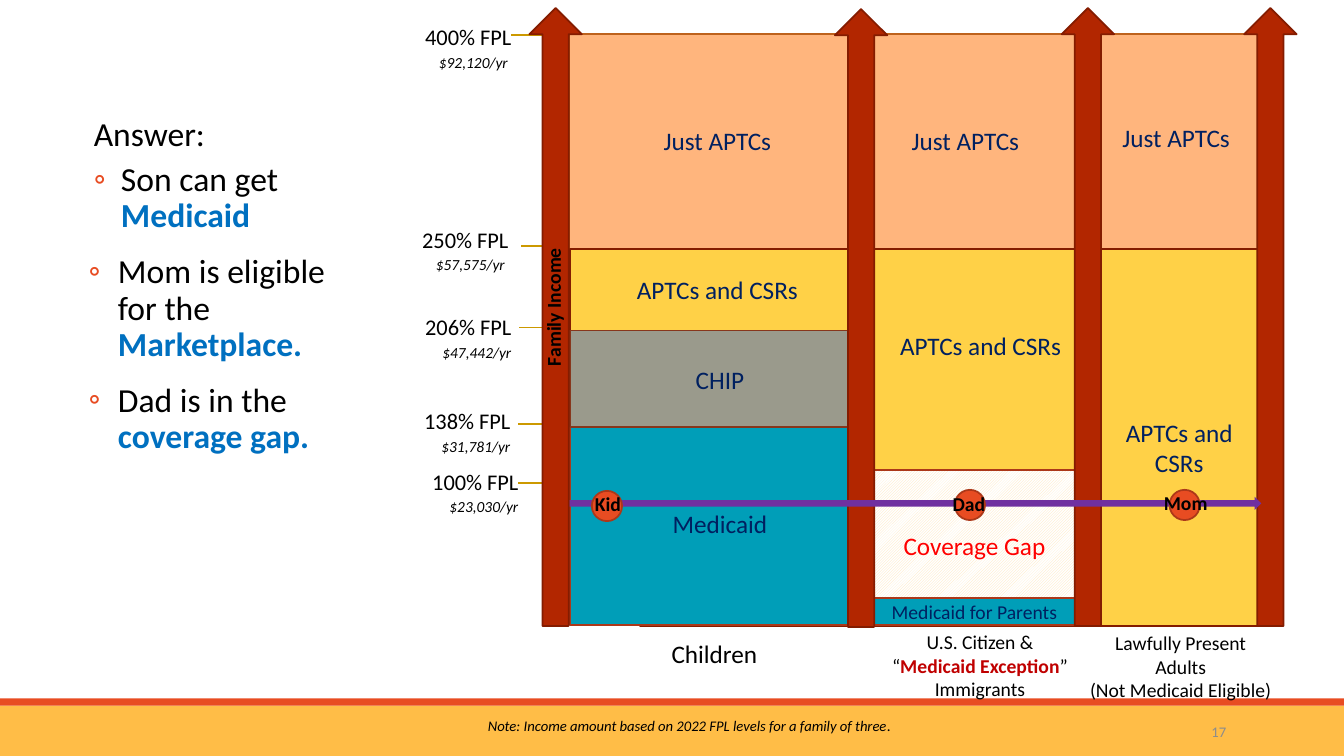
from dataclasses import dataclass

from lxml import etree
from pptx import Presentation
from pptx.dml.color import RGBColor
from pptx.enum.dml import MSO_PATTERN
from pptx.enum.shapes import MSO_CONNECTOR, MSO_SHAPE
from pptx.enum.text import MSO_ANCHOR, MSO_AUTO_SIZE, PP_ALIGN
from pptx.oxml.ns import qn
from pptx.util import Emu, Pt

PX = 9144
FONT = "Calibri"
BLACK, NAVY, BLUE = "000000", "002060", "0070C0"
YELLOW, TEAL, ORANGE = "FFD147", "009EB8", "E84C22"
RUST, MAROON = "AC3819", "841C00"
RECT, CORNER, OVAL = MSO_SHAPE.RECTANGLE, MSO_SHAPE.CORNER, MSO_SHAPE.OVAL
UP_ARROW, RIGHT_ARROW = MSO_SHAPE.UP_ARROW, MSO_SHAPE.RIGHT_ARROW
STRAIGHT = MSO_CONNECTOR.STRAIGHT
LEFT, CENTER, RIGHT = PP_ALIGN.LEFT, PP_ALIGN.CENTER, PP_ALIGN.RIGHT
TOP, MIDDLE = MSO_ANCHOR.TOP, MSO_ANCHOR.MIDDLE
NO_AUTOFIT = MSO_AUTO_SIZE.NONE
DIAGONAL = MSO_PATTERN.LIGHT_UPWARD_DIAGONAL


@dataclass(frozen=True)
class Words:
    text: str
    size: float
    color: str = BLACK
    bold: bool = False
    italic: bool = False


@dataclass(frozen=True)
class Box:
    left: int
    top: int
    width: int
    height: int

    def emu(self):
        return [Emu(v * PX) for v in (self.left, self.top, self.width, self.height)]


@dataclass(frozen=True)
class Band:
    box: Box
    fill: str
    line: str
    label: Words | None = None


@dataclass(frozen=True)
class Label:
    box: Box
    lines: tuple
    align: int = CENTER
    rotation: int = 0
    anchor: int = TOP
    leading: int | None = None


@dataclass(frozen=True)
class FplLevel:
    percent: str
    amount: str
    right: int
    top: int
    tick_left: int
    tick_y: int


@dataclass(frozen=True)
class Person:
    name: str
    circle_left: int
    circle_top: int
    name_left: int
    name_top: int


@dataclass(frozen=True)
class Answer:
    lead: str
    program: str
    margin: int
    hanging: int


FPL_LEVELS = [
    FplLevel("400% FPL", "$92,120/yr ", 517, 24, 507, 35),
    FplLevel("250% FPL", "$57,575/yr ", 514, 225, 517, 244),
    FplLevel("206% FPL", "$47,442/yr", 517, 312, 515, 325),
    FplLevel("138% FPL", "$31,781/yr", 516, 405, 514, 421),
    FplLevel("100% FPL", "$23,030/yr", 524, 465, 514, 479),
]
MEDICAID = Band(Box(565, 418, 298, 202), TEAL, RUST, Words("Medicaid", 18, NAVY))
COVERAGE_GAP = Band(Box(863, 466, 207, 151), "FFE5B5", RUST, Words("Coverage Gap", 18, "FF0000"))
CHIP = Band(Box(565, 328, 298, 96), "9A9A8C", "87361C", Words("CHIP", 18, NAVY))
PARENTS = Band(Box(863, 593, 207, 27), TEAL, RUST, Words("Medicaid for Parents", 14, NAVY))
JUST_APTCS = Band(Box(565, 34, 687, 214), "FFB57D", "BD621D")
APTCS_AND_CSRS = Band(Box(565, 247, 687, 374), YELLOW, MAROON)
INCOME_ARROWS = [(525, 8), (828, 9), (1053, 8), (1234, 8)]

just_aptcs = ((Words("Just APTCs", 18, NAVY),),)
aptcs_and_csrs = ((Words("APTCs and CSRs", 18, NAVY),),)
LABELS = [
    Label(Box(587, 119, 249, 40), just_aptcs),
    Label(Box(833, 119, 249, 40), just_aptcs),
    Label(Box(1042, 116, 249, 40), just_aptcs),
    Label(Box(587, 267, 249, 40), aptcs_and_csrs),
    Label(Box(848, 323, 249, 40), aptcs_and_csrs),
    Label(Box(1085, 409, 169, 71), aptcs_and_csrs),
    Label(Box(475, 278, 152, 38), ((Words("Family Income", 14, bold=True),),), LEFT, 270),
    Label(Box(554, 628, 309, 40), ((Words("Children", 18),),)),
    Label(Box(874, 620, 196, 81), ((Words("U.S. Citizen & “", 14),
                                    Words("Medicaid Exception", 14, "C00000", True),
                                    Words("” Immigrants", 14)),)),
    Label(Box(1070, 621, 202, 81), ((Words("Lawfully Present Adults", 14),),
                                    (Words("(Not Medicaid Eligible)", 14),))),
    Label(Box(474, 706, 535, 29), ((
        Words("Note: Income amount based on 2022 FPL levels for a family of three", 10.5, italic=True),
        Words(".", 11, italic=True)),), LEFT),
    Label(Box(1083, 706, 143, 40), ((Words("17", 10.5, "8C8C8C"),),), RIGHT, anchor=MIDDLE),
]
PEOPLE = [Person("Kid", 587, 487, 570, 483), Person("Dad", 947, 486, 928, 483),
          Person("Mom", 1160, 486, 1143, 482)]
ANSWERS = [Answer("Son can get ", "Medicaid", 32, 27),
           Answer("Mom is eligible for the ", "Marketplace.", 29, 29),
           Answer("Dad is in the ", "coverage gap.", 29, 29)]


def rgb(color: str) -> RGBColor:
    return RGBColor.from_string(color)


def add_words(paragraph, words: Words) -> None:
    run = paragraph.add_run()
    run.text = words.text
    font = run.font
    font.name, font.size, font.color.rgb = FONT, Pt(words.size), rgb(words.color)
    font.bold, font.italic = words.bold, words.italic


def draw_shape(slide, kind: int, band: Band):
    shape = slide.shapes.add_shape(kind, *band.box.emu())
    shape.shadow.inherit = False
    shape.fill.solid()
    shape.fill.fore_color.rgb = rgb(band.fill)
    if band.line:
        shape.line.color.rgb, shape.line.width = rgb(band.line), Pt(1.25)
    else:
        shape.line.fill.background()
    if band.label:
        shape.text_frame.vertical_anchor = MIDDLE
        paragraph = shape.text_frame.paragraphs[0]
        paragraph.alignment = CENTER
        add_words(paragraph, band.label)
    return shape


def draw_label(slide, label: Label) -> None:
    textbox = slide.shapes.add_textbox(*label.box.emu())
    textbox.rotation = label.rotation
    frame = textbox.text_frame
    frame.word_wrap, frame.vertical_anchor = True, label.anchor
    for index, line in enumerate(label.lines):
        paragraph = frame.add_paragraph() if index else frame.paragraphs[0]
        paragraph.alignment = label.align
        if label.leading:
            paragraph.line_spacing = Pt(label.leading)
        for words in line:
            add_words(paragraph, words)


def draw_level(slide, level: FplLevel) -> None:
    y = Emu(level.tick_y * PX)
    tick = slide.shapes.add_connector(
        STRAIGHT, Emu(level.tick_left * PX), y, Emu((level.tick_left + 60) * PX), y)
    tick.line.color.rgb, tick.line.width = rgb("CC9900"), Pt(1.25)
    etree.SubElement(tick._element.spPr, qn("a:effectLst"))
    lines = ((Words(level.percent, 16),), (Words(level.amount, 11, italic=True),))
    draw_label(slide, Label(Box(level.right - 152, level.top, 152, 52), lines, RIGHT, leading=15))


def draw_person(slide, person: Person) -> None:
    draw_shape(slide, OVAL, Band(Box(person.circle_left, person.circle_top, 30, 30), ORANGE, RUST))
    draw_label(slide, Label(Box(person.name_left, person.name_top, 66, 34),
                            ((Words(person.name, 14, bold=True),),)))


def format_answer(paragraph, margin: int, hanging: int, bulleted: bool) -> None:
    properties = paragraph._p.get_or_add_pPr()
    properties.set("marL", str(margin * PX))
    properties.set("indent", str(-hanging * PX))
    if bulleted:
        color = etree.SubElement(properties, qn("a:buClr"))
        etree.SubElement(color, qn("a:srgbClr"), val=ORANGE)
        etree.SubElement(properties, qn("a:buFont"), typeface=FONT)
        etree.SubElement(properties, qn("a:buChar"), char="◦")
    else:
        etree.SubElement(properties, qn("a:buNone"))
    paragraph.alignment, paragraph.line_spacing = LEFT, 0.9
    paragraph.space_before = Pt(2 if bulleted else 0)
    paragraph.space_after = Pt(12 if bulleted else 4)


def write_answers(body) -> None:
    body.left, body.top, body.width, body.height = Box(78, 112, 295, 349).emu()
    frame = body.text_frame
    frame.word_wrap, frame.auto_size, frame.vertical_anchor = True, NO_AUTOFIT, TOP
    heading = frame.paragraphs[0]
    format_answer(heading, 5, 0, False)
    add_words(heading, Words("Answer:", 24))
    for answer in ANSWERS:
        paragraph = frame.add_paragraph()
        format_answer(paragraph, answer.margin, answer.hanging, True)
        add_words(paragraph, Words(answer.lead, 24))
        add_words(paragraph, Words(answer.program, 24, BLUE, True))


def main() -> None:
    """Build the coverage answer slide and save it."""
    deck = Presentation()
    deck.slide_width, deck.slide_height = Emu(1333 * PX), Emu(750 * PX)
    slide = deck.slides.add_slide(deck.slide_layouts[1])
    title = slide.shapes.title._element
    title.getparent().remove(title)
    write_answers(slide.placeholders[1])
    draw_shape(slide, RECT, Band(Box(0, 700, 1333, 50), "FFBD47", ""))
    draw_shape(slide, RECT, Band(Box(0, 693, 1333, 7), ORANGE, ""))
    for level in FPL_LEVELS:
        draw_level(slide, level)
    draw_shape(slide, RECT, JUST_APTCS)
    marketplace = draw_shape(slide, CORNER, APTCS_AND_CSRS)
    marketplace.rotation = 180
    marketplace.adjustments[0], marketplace.adjustments[1] = 0.36, 1.65
    draw_shape(slide, RECT, MEDICAID)
    gap = draw_shape(slide, RECT, COVERAGE_GAP)
    gap.fill.patterned()
    gap.fill.pattern = DIAGONAL
    gap.fill.fore_color.rgb, gap.fill.back_color.rgb = rgb("FFE5B5"), rgb("FFFFFF")
    for band in (CHIP, PARENTS):
        draw_shape(slide, RECT, band)
    for left, top in INCOME_ARROWS:
        draw_shape(slide, UP_ARROW, Band(Box(left, top, 52, 613), "B22600", MAROON))
    for label in LABELS:
        draw_label(slide, label)
    draw_shape(slide, RIGHT_ARROW, Band(Box(565, 493, 686, 13), "7030A0", ""))
    for person in PEOPLE:
        draw_person(slide, person)
    deck.save("out.pptx")


if __name__ == "__main__":
    main()
